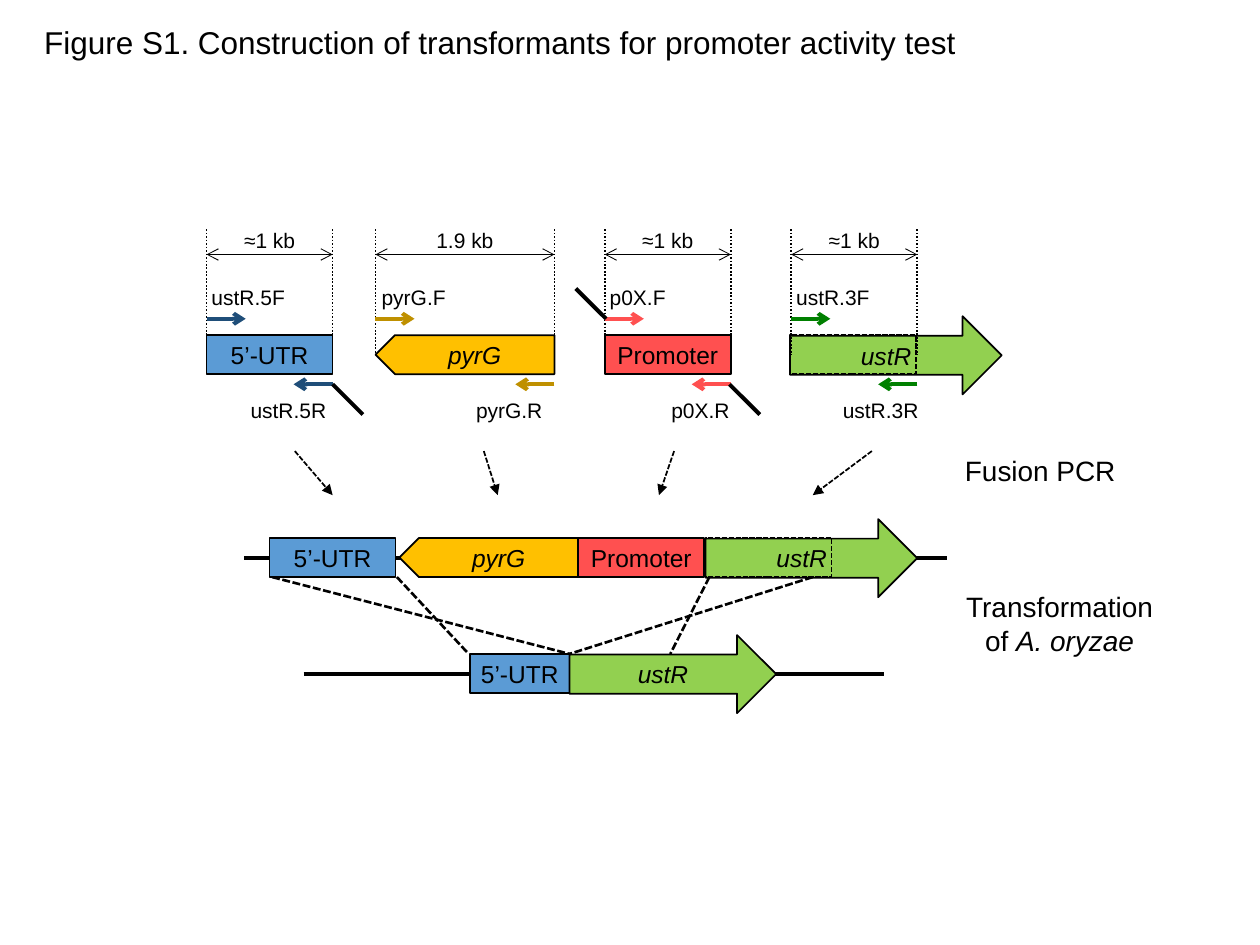
from dataclasses import dataclass

from lxml import etree
from pptx import Presentation
from pptx.dml.color import RGBColor
from pptx.enum.dml import MSO_LINE
from pptx.enum.shapes import MSO_CONNECTOR, MSO_SHAPE
from pptx.enum.text import MSO_ANCHOR, MSO_AUTO_SIZE, PP_ALIGN
from pptx.oxml.ns import qn
from pptx.util import Inches, Pt

STRAIGHT = MSO_CONNECTOR.STRAIGHT
RECT, LEFT_ARROW, RIGHT_ARROW = MSO_SHAPE.RECTANGLE, MSO_SHAPE.LEFT_ARROW, MSO_SHAPE.RIGHT_ARROW
DOT, DASH = MSO_LINE.ROUND_DOT, MSO_LINE.SQUARE_DOT
LEFT, CENTER = PP_ALIGN.LEFT, PP_ALIGN.CENTER
TOP, MIDDLE = MSO_ANCHOR.TOP, MSO_ANCHOR.MIDDLE
FIT, NO_FIT = MSO_AUTO_SIZE.SHAPE_TO_FIT_TEXT, MSO_AUTO_SIZE.NONE


@dataclass(frozen=True)
class Theme:
    font: str = "Arial"
    black: str = "000000"
    utr: str = "5B9BD5"
    pyrg: str = "FFC000"
    promoter: str = "FF5050"
    ustr: str = "92D050"
    utr_primer: str = "1F4E79"
    pyrg_primer: str = "BF9000"
    ustr_primer: str = "008000"
    title: int = 18
    step: int = 16
    gene: int = 14
    label: int = 12


T = Theme()
GENE_H = 0.31
ARROW_H = 0.62
PRIMER = 0.31
SIZE_W = 0.7


def set_font(font, size, italic=None):
    font.name = T.font
    font.size = Pt(size)
    font.italic = italic
    font.color.rgb = RGBColor.from_string(T.black)


def add_line(s, start, end, width, color=T.black, dash=None, head=None, tail=None):
    line = s.shapes.add_connector(STRAIGHT, *map(Inches, (*start, *end)))
    line.line.color.rgb = RGBColor.from_string(color)
    line.line.width = Pt(width)
    if dash is not None:
        line.line.dash_style = dash
    ln = line.line._get_or_add_ln()
    for tag, kind in (("a:headEnd", head), ("a:tailEnd", tail)):
        if kind:
            etree.SubElement(ln, qn(tag)).set("type", kind)
    etree.SubElement(line._element.spPr, qn("a:effectLst"))


def add_text(s, text, x, y, w, h, size, align=LEFT):
    tf = s.shapes.add_textbox(*map(Inches, (x, y, w, h))).text_frame
    tf.word_wrap = False
    tf.auto_size = FIT
    p = tf.paragraphs[0]
    p.text = text
    p.alignment = align
    set_font(p.font, size)
    return p


def add_gene(s, kind, x, y, w, h, fill=None, text="", italic=None, dash=None):
    sp = s.shapes.add_shape(kind, *map(Inches, (x, y, w, h)))
    sp.shadow.inherit = False
    if fill:
        sp.fill.solid()
        sp.fill.fore_color.rgb = RGBColor.from_string(fill)
    else:
        sp.fill.background()
    sp.line.color.rgb = RGBColor.from_string(T.black)
    sp.line.width = Pt(1)
    if dash is not None:
        sp.line.dash_style = dash
    if text:
        tf = sp.text_frame
        tf.margin_left = tf.margin_right = tf.margin_top = tf.margin_bottom = 0
        tf.vertical_anchor = MIDDLE
        p = tf.paragraphs[0]
        p.text = text
        p.alignment = CENTER
        set_font(p.font, T.gene, italic)
    return sp


def add_utr(s, x, y, w=1):
    add_gene(s, RECT, x, y, w, GENE_H, T.utr, "5’-UTR")


def add_ustr(s, x, y, w=1.68):
    add_gene(s, RIGHT_ARROW, x, y - 0.15, w, ARROW_H, T.ustr, "ustR", True)


def add_cassette(s, y, utr_x, pyrg_x, promoter_x, ustr_x):
    add_utr(s, utr_x, y)
    pyrg = add_gene(s, LEFT_ARROW, pyrg_x, y, 1.42, GENE_H, T.pyrg, "pyrG", True)
    pyrg.adjustments[0] = 1
    pyrg.adjustments[1] = 0.5
    add_gene(s, RECT, promoter_x, y, 1, GENE_H, T.promoter, "Promoter")
    add_ustr(s, ustr_x, y)
    add_gene(s, RECT, ustr_x, y, 1, GENE_H, dash=DASH)


def add_dimension(s, x, w, text):
    for edge in (x, x + w):
        add_line(s, (edge, 1.82), (edge, 2.82), 1, dash=DOT)
    add_line(s, (x, 2.02), (x + w, 2.02), 0.5, head="arrow", tail="arrow")
    add_text(s, text, x + (w - SIZE_W) / 2, 1.76, SIZE_W, 0.3, T.label, CENTER)


def add_primers(s, name, x, w, color, forward, reverse):
    add_line(s, (x, 2.53), (x + PRIMER, 2.53), 2.25, color, tail="arrow")
    add_line(s, (x + w, 3.05), (x + w - PRIMER, 3.05), 2.25, color, tail="arrow")
    for suffix, (left, width), y in (("F", forward, 2.21), ("R", reverse, 3.11)):
        add_text(s, name + suffix, left, y, width, 0.3, T.label)


def add_title(s, text):
    title = s.shapes.title
    title.left, title.top, title.width, title.height = map(Inches, (0.25, 0.13, 7.44, 0.4))
    tf = title.text_frame
    tf.word_wrap = False
    tf.auto_size = NO_FIT
    tf.vertical_anchor = TOP
    p = tf.paragraphs[0]
    p.text = text
    p.alignment = LEFT
    set_font(p.font, T.title)


def main():
    prs = Presentation()
    prs.slide_width, prs.slide_height = Inches(10), Inches(7.5)
    s = prs.slides.add_slide(prs.slide_layouts[5])
    add_title(s, "Figure S1. Construction of transformants for promoter activity test")

    add_cassette(s, 2.66, 1.64, 2.98, 4.8, 6.27)
    fragments = (
        ("ustR.5", 1.64, 1, "≈1 kb", T.utr_primer, (1.58, 0.79), (1.89, 0.81)),
        ("pyrG.", 2.98, 1.42, "1.9 kb", T.pyrg_primer, (2.93, 0.72), (3.68, 0.73)),
        ("p0X.", 4.8, 1, "≈1 kb", T.promoter, (4.74, 0.65), (5.23, 0.67)),
        ("ustR.3", 6.28, 1, "≈1 kb", T.ustr_primer, (6.22, 0.79), (6.59, 0.81)),
    )
    for name, x, w, size, color, forward, reverse in fragments:
        add_dimension(s, x, w, size)
        add_primers(s, name, x, w, color, forward, reverse)
    for x, y in ((2.64, 3.05), (5.79, 3.05), (4.57, 2.29)):
        add_line(s, (x, y), (x + 0.24, y + 0.24), 2.25)

    for x1, x2 in ((2.34, 2.64), (3.84, 3.95), (5.35, 5.23), (6.92, 6.45)):
        add_line(s, (x1, 3.58), (x2, 3.93), 1, dash=DASH, tail="triangle")
    add_text(s, "Fusion PCR", 7.56, 3.55, 1.41, 0.37, T.step)

    for x1, x2 in ((3.15, 3.72), (2.16, 4.52), (6.45, 4.52), (5.63, 5.32)):
        add_line(s, (x1, 4.58), (x2, 5.19), 1.5, dash=DASH)
    add_line(s, (1.94, 4.43), (7.52, 4.43), 2.25)
    add_cassette(s, 4.27, 2.14, 3.17, 4.59, 5.6)

    add_line(s, (2.41, 5.35), (7.02, 5.35), 2.25)
    add_utr(s, 3.73, 5.19, 0.79)
    add_ustr(s, 4.52, 5.19, 1.64)
    p = add_text(s, "Transformation\vof ", 7.56, 4.63, 1.7, 0.64, T.step, CENTER)
    r = p.add_run()
    r.text = "A. oryzae"
    r.font.italic = True

    prs.save("out.pptx")


if __name__ == "__main__":
    main()
